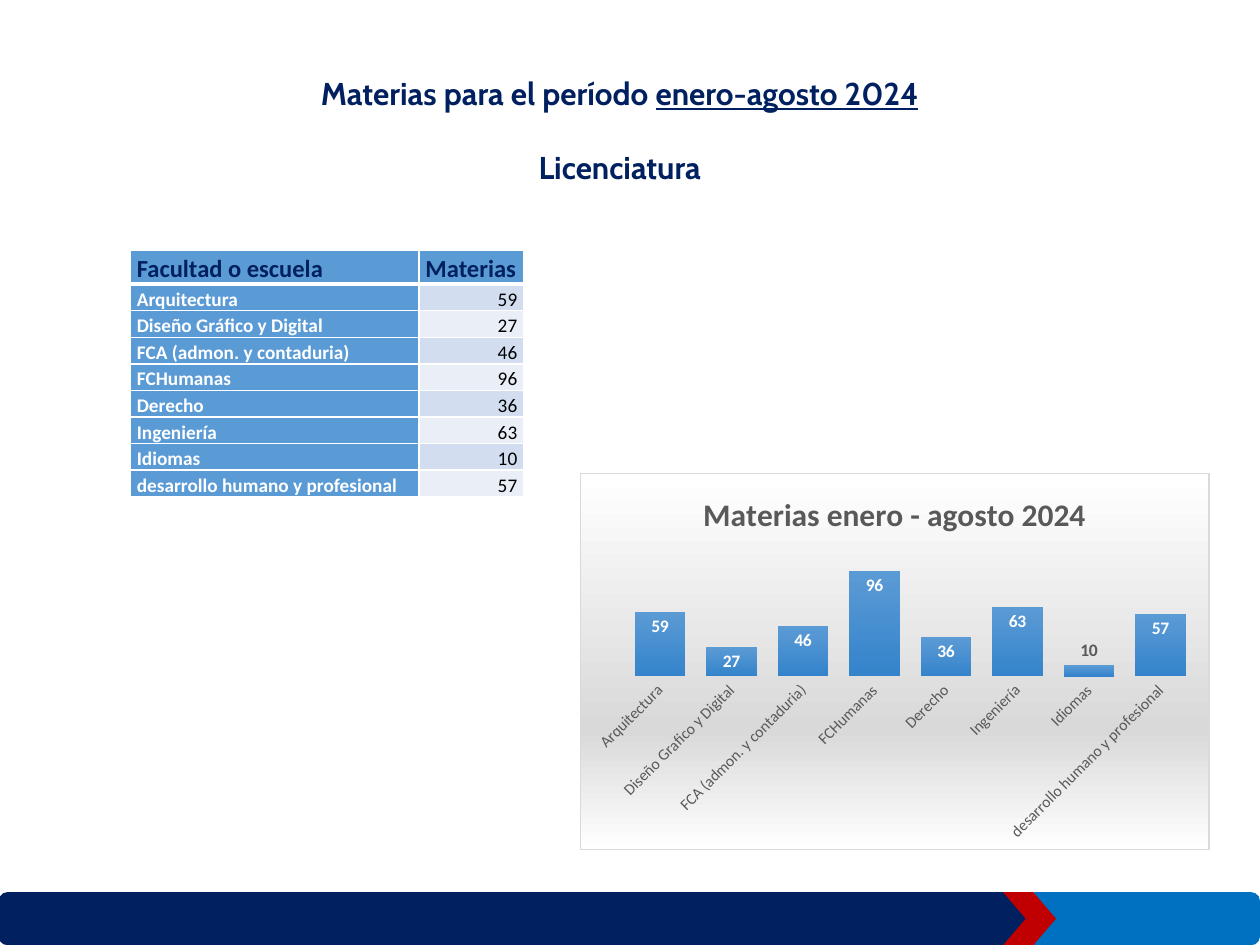
from dataclasses import dataclass

from pptx import Presentation
from pptx.chart.data import CategoryChartData
from pptx.dml.color import RGBColor
from pptx.enum import chart as charts, shapes, text
from pptx.oxml import parse_xml
from pptx.oxml.ns import nsdecls, qn
from pptx.util import Pt


@dataclass(frozen=True)
class Theme:
    navy: str = "002060"
    blue: str = "0070C0"
    red: str = "C00000"
    header: str = "5B9BD5"
    bar_end: str = "3483CB"
    bands: tuple = ("D2DEEF", "EAEFF7")
    white: str = "FFFFFF"
    black: str = "000000"
    grey: str = "595959"
    pale: str = "D9D9D9"
    heading_font: str = "Cabin"
    body_font: str = "Calibri"
    heading: float = 18
    table_head: float = 14
    table_body: float = 11
    labels: float = 10
    axis: float = 9


@dataclass(frozen=True)
class Band:
    kind: shapes.MSO_SHAPE
    left: float
    width: float
    color: str


@dataclass(frozen=True)
class Subject:
    school: str
    count: int
    chart_name: str = ""


THEME = Theme()
LOWEST_INSIDE_LABEL = 20
FOOTER = [
    Band(shapes.MSO_SHAPE.ROUNDED_RECTANGLE, -0.72, 595.5, THEME.navy),
    Band(shapes.MSO_SHAPE.ROUNDED_RECTANGLE, 586.8, 133.2, THEME.blue),
    Band(shapes.MSO_SHAPE.CHEVRON, 573.1, 30.3, THEME.red),
]
SUBJECTS = [
    Subject("Arquitectura", 59),
    Subject("Diseño Gráfico y Digital", 27, "Diseño Grafico y Digital"),
    Subject("FCA (admon. y contaduria)", 46),
    Subject("FCHumanas", 96),
    Subject("Derecho", 36),
    Subject("Ingeniería", 63),
    Subject("Idiomas", 10),
    Subject("desarrollo humano y profesional", 57),
]


def style_font(font, name: str, size: float, color: str, bold: bool = False) -> None:
    font.name = name
    font.size = Pt(size)
    font.bold = bold
    font.color.rgb = RGBColor.from_string(color)


def draw_band(page, band: Band) -> None:
    shape = page.shapes.add_shape(band.kind, Pt(band.left), Pt(509.8), Pt(band.width), Pt(30.4))
    shape.shadow.inherit = False
    shape.fill.solid()
    shape.fill.fore_color.rgb = RGBColor.from_string(band.color)
    shape.line.fill.background()
    if band.kind == shapes.MSO_SHAPE.CHEVRON:
        shape.adjustments[0] = 0.43


def draw_heading(page) -> None:
    box = page.shapes.add_textbox(Pt(167), Pt(28), Pt(374.4), Pt(122.4))
    frame = box.text_frame
    frame.word_wrap = True
    period, level = frame.paragraphs[0], frame.add_paragraph()
    period.add_run().text = "Materias para el período "
    span = period.add_run()
    span.text = "enero-agosto 2024"
    span.font.underline = True
    level.text = "Licenciatura"
    for para in (period, level):
        para.alignment = text.PP_ALIGN.CENTER
        para.line_spacing = 1.5
        para.space_after = Pt(10)
        style_font(para.font, THEME.heading_font, THEME.heading, THEME.navy, True)


def fill_cell(cell, words: str, fill: str, size: float, color: str,
              bold: bool, right: bool = False, bottom_line: float = 1) -> None:
    properties = cell._tc.get_or_add_tcPr()
    for side in "LRTB":
        width = Pt(bottom_line if side == "B" else 1)
        properties.append(parse_xml(
            f'<a:ln{side} {nsdecls("a")} w="{width}"><a:solidFill>'
            f'<a:srgbClr val="{THEME.white}"/></a:solidFill></a:ln{side}>'))
    cell.fill.solid()
    cell.fill.fore_color.rgb = RGBColor.from_string(fill)
    cell.vertical_anchor = text.MSO_ANCHOR.BOTTOM
    cell.margin_left = cell.margin_right = Pt(3.6)
    cell.margin_top = cell.margin_bottom = Pt(0)
    cell.text = words
    para = cell.text_frame.paragraphs[0]
    para.alignment = text.PP_ALIGN.RIGHT if right else text.PP_ALIGN.LEFT
    para.line_spacing = 1.15
    para.space_after = Pt(10)
    style_font(para.font, THEME.body_font, size, color, bold)


def draw_table(page, subjects: list[Subject]) -> None:
    rows = len(subjects) + 1
    table = page.shapes.add_table(
        rows, 2, Pt(74.6), Pt(143), Pt(224.6), Pt(15.2 * rows)).table
    table.first_row = table.horz_banding = False
    for column, width in zip(table.columns, (164.9, 59.7)):
        column.width = Pt(width)
    for index, title in enumerate(("Facultad o escuela", "Materias")):
        fill_cell(table.cell(0, index), title, THEME.header, THEME.table_head,
                  THEME.navy, True, bottom_line=3)
    for row, subject in enumerate(subjects, start=1):
        fill_cell(table.cell(row, 0), subject.school, THEME.header,
                  THEME.table_body, THEME.white, True)
        fill_cell(table.cell(row, 1), str(subject.count), THEME.bands[(row - 1) % 2],
                  THEME.table_body, THEME.black, False, right=True)


def shape_properties(stops: list[tuple[int, str]], line: str) -> str:
    """Chart shape properties with a gradient running from top to bottom."""
    marks = "".join(f'<a:gs pos="{percent * 1000}"><a:srgbClr val="{color}"/></a:gs>'
                    for percent, color in stops)
    return (f'<c:spPr {nsdecls("c", "a")}><a:gradFill><a:gsLst>{marks}</a:gsLst>'
            f'<a:lin ang="5400000" scaled="0"/></a:gradFill>{line}</c:spPr>')


def place_plot(chart) -> None:
    """Fix the inner plot area as fractions of the chart."""
    area = chart._chartSpace.chart.plotArea
    for old in area.findall(qn("c:layout")):
        area.remove(old)
    places = "".join(f'<c:{name} val="{value}"/>' for name, value in (
        ("layoutTarget", "inner"), ("xMode", "edge"), ("yMode", "edge"),
        ("x", 0.07), ("y", 0.19), ("w", 0.91), ("h", 0.35)))
    area.insert(0, parse_xml(
        f'<c:layout {nsdecls("c")}><c:manualLayout>{places}</c:manualLayout></c:layout>'))


def label_bars(series, subjects: list[Subject]) -> None:
    """Put values inside the bars, or above a bar too short to hold one."""
    labels = series.data_labels
    labels.show_value = True
    labels.position = charts.XL_LABEL_POSITION.INSIDE_END
    style_font(labels.font, THEME.body_font, THEME.labels, THEME.white, True)
    for index, subject in enumerate(subjects):
        if subject.count < LOWEST_INSIDE_LABEL:
            label = series.points[index].data_label
            style_font(label.font, THEME.body_font, THEME.labels, THEME.grey, True)
            label.position = charts.XL_LABEL_POSITION.OUTSIDE_END


def draw_chart(page, subjects: list[Subject]) -> None:
    data = CategoryChartData()
    data.categories = [item.chart_name or item.school for item in subjects]
    data.add_series("Materias", [item.count for item in subjects])
    chart = page.shapes.add_chart(
        charts.XL_CHART_TYPE.COLUMN_CLUSTERED,
        Pt(331.2), Pt(270), Pt(360), Pt(216), data).chart
    style_font(chart.font, THEME.body_font, THEME.labels, THEME.black)
    chart.has_legend = False
    chart.has_title = True
    title = chart.chart_title
    title.include_in_layout = False
    title.text_frame.text = "Materias enero - agosto 2024"
    style_font(title.text_frame.paragraphs[0].font,
               THEME.body_font, THEME.heading, THEME.grey, True)

    values = chart.value_axis
    values.visible = values.has_major_gridlines = False
    values.minimum_scale, values.maximum_scale = 0, 120
    names = chart.category_axis
    names.major_tick_mark = charts.XL_TICK_MARK.NONE
    names.format.line.fill.background()
    style_font(names.tick_labels.font, THEME.body_font, THEME.axis, THEME.grey)
    names._element.find(qn("c:txPr")).find(qn("a:bodyPr")).set("rot", "-2700000")

    plot = chart.plots[0]
    plot.gap_width = 41
    plot.vary_by_categories = False
    label_bars(plot.series[0], subjects)
    bars = plot.series[0].format.fill
    bars.gradient()
    bars.gradient_angle = 270
    for stop, color, position in zip(
            bars.gradient_stops, (THEME.header, THEME.bar_end), (0, 1)):
        stop.color.rgb = RGBColor.from_string(color)
        stop.position = position

    place_plot(chart)
    border = (f'<a:ln w="{Pt(0.75)}"><a:solidFill><a:srgbClr val="{THEME.pale}"/>'
              '</a:solidFill></a:ln>')
    chart._chartSpace.chart.addnext(parse_xml(shape_properties(
        [(0, THEME.white), (68, THEME.pale), (100, THEME.white)], border)))


def main() -> None:
    deck = Presentation()
    deck.slide_width, deck.slide_height = Pt(720), Pt(540)
    page = deck.slides.add_slide(deck.slide_layouts[6])
    for band in FOOTER:
        draw_band(page, band)
    draw_heading(page)
    draw_table(page, SUBJECTS)
    draw_chart(page, SUBJECTS)
    deck.save("out.pptx")


if __name__ == "__main__":
    main()
